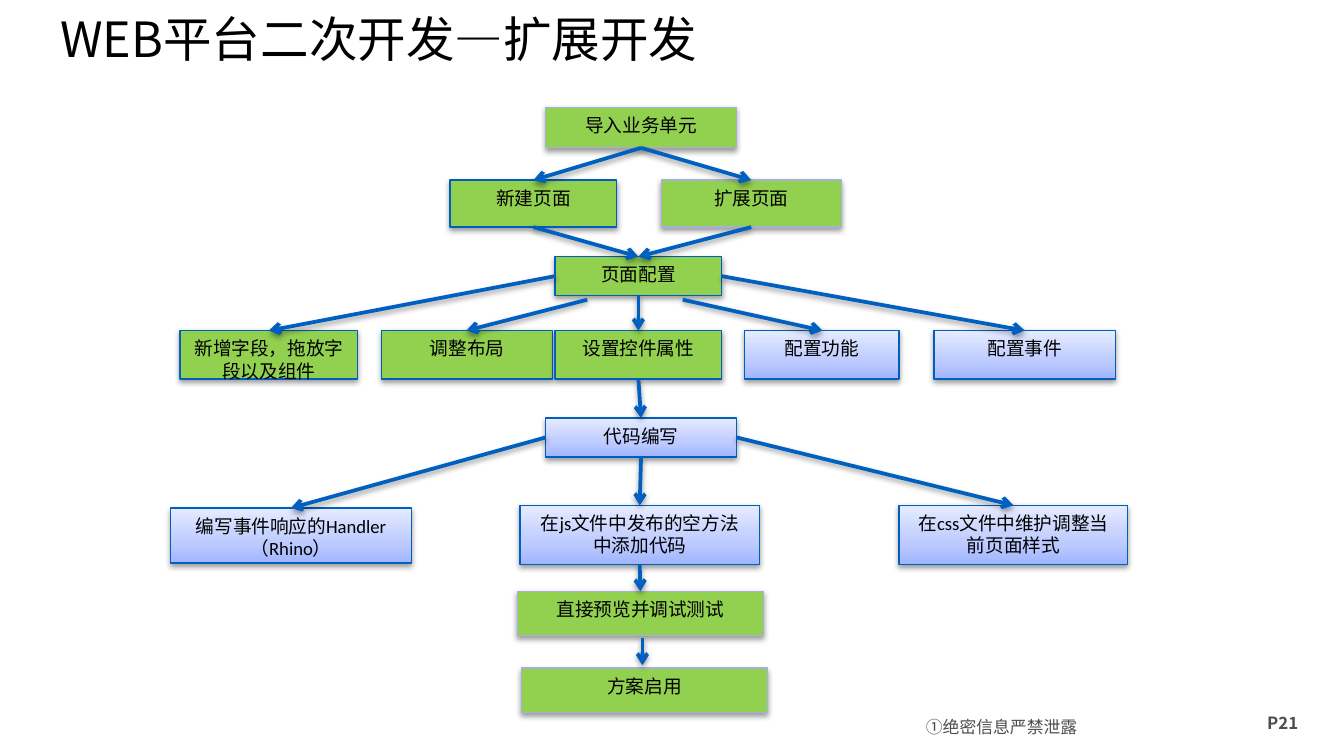
"""Build the slide showing the extension development flow of the WEB platform."""
from copy import deepcopy
from dataclasses import dataclass

from lxml.etree import SubElement
from pptx import Presentation
from pptx.dml.color import RGBColor
from pptx.enum.shapes import MSO_CONNECTOR as Connector, MSO_SHAPE as Shape
from pptx.enum.text import MSO_ANCHOR as Anchor, PP_ALIGN as Align
from pptx.oxml.ns import qn
from pptx.util import Inches, Pt

BLACK = RGBColor(0x00, 0x00, 0x00)
GRAY = RGBColor(0x4D, 0x4D, 0x4D)
GREEN = RGBColor(0x92, 0xD0, 0x50)
PALE_EDGE = RGBColor(0xA5, 0xB1, 0xD8)
BLUE_EDGE = RGBColor(0x00, 0x5E, 0xBC)
ARROW_BLUE = RGBColor(0x00, 0x60, 0xC0)
BLUE_STOPS = (
    (0, RGBColor(0xA0, 0xB5, 0xFF)),
    (0.35, RGBColor(0xBC, 0xCA, 0xFF)),
    (1, RGBColor(0xE5, 0xEB, 0xFF)),
)
CJK_FONT = "Noto Sans CJK SC"
TOP, LEFT, BOTTOM, RIGHT = range(4)


@dataclass
class Step:
    text: str
    left: float
    top: float
    width: float
    height: float
    green: bool = True
    edge: RGBColor = BLUE_EDGE
    font: str = "Calibri"


@dataclass
class Link:
    source: str
    target: str
    side: int = BOTTOM


@dataclass
class Caption:
    text: str
    left: float
    top: float
    width: float
    height: float
    size: float
    color: RGBColor
    margins: tuple[float, float] = (0.1, 0.05)
    bold: bool = False
    anchor: Anchor = Anchor.TOP
    align: Align = Align.LEFT
    spacing: float | None = None


ROW_PAGE = (1.34, 0.35)
ROW_CONFIG = (2.46, 0.36)
ROW_CODE = (3.76, 0.44)
STEPS = {
    "import": Step("导入业务单元", 4.06, 0.8, 1.42, 0.3, edge=PALE_EDGE, font="Arial"),
    "new": Step("新建页面", 3.35, ROW_PAGE[0], 1.24, ROW_PAGE[1]),
    "extend": Step("扩展页面", 4.92, ROW_PAGE[0], 1.34, ROW_PAGE[1], edge=PALE_EDGE),
    "config": Step("页面配置", 4.13, 1.91, 1.24, 0.29),
    "fields": Step("新增字段，拖放字段以及组件", 1.34, ROW_CONFIG[0], 1.32, ROW_CONFIG[1]),
    "layout": Step("调整布局", 2.84, ROW_CONFIG[0], 1.27, ROW_CONFIG[1]),
    "controls": Step("设置控件属性", 4.13, ROW_CONFIG[0], 1.24, ROW_CONFIG[1]),
    "functions": Step("配置功能", 5.54, ROW_CONFIG[0], 1.15, ROW_CONFIG[1], green=False),
    "events": Step("配置事件", 6.95, ROW_CONFIG[0], 1.35, ROW_CONFIG[1], green=False),
    "code": Step("代码编写", 4.06, 3.11, 1.42, 0.29, green=False),
    "handler": Step("编写事件响应的Handler\n（Rhino）", 1.27, 3.78, 1.79, 0.41, green=False),
    "js": Step("在js文件中发布的空方法中添加代码", 3.87, ROW_CODE[0], 1.78, ROW_CODE[1], green=False),
    "css": Step("在css文件中维护调整当前页面样式", 6.69, ROW_CODE[0], 1.7, ROW_CODE[1], green=False),
    "preview": Step("直接预览并调试测试", 3.85, 4.4, 1.83, 0.33, edge=PALE_EDGE),
    "enable": Step("方案启用", 3.88, 4.97, 1.83, 0.33, edge=PALE_EDGE),
}
LINKS = (
    Link("import", "new"),
    Link("import", "extend"),
    Link("new", "config"),
    Link("extend", "config"),
    Link("config", "fields", LEFT),
    Link("config", "controls"),
    Link("config", "events", RIGHT),
    Link("controls", "code"),
    Link("code", "handler", LEFT),
    Link("code", "js"),
    Link("code", "css", RIGHT),
    Link("js", "preview"),
)
FREE_ARROWS = (
    (4.37, 2.23, 3.47, 2.46),
    (5.08, 2.23, 6.12, 2.46),
    (4.78, 4.75, 4.78, 4.95),
)
CAPTIONS = (
    Caption("WEB平台二次开发—扩展开发", 0.35, 0, 7.77, 0.57, 26, BLACK, anchor=Anchor.MIDDLE),
    Caption("①绝密信息严禁泄露", 6.81, 5.28, 1.77, 0.27, 9, GRAY, margins=(0.08, 0.01),
            align=Align.JUSTIFY, spacing=14),
    Caption("P21", 9.33, 5.25, 0.56, 0.25, 9, GRAY, bold=True),
)


def format_text(frame, font: str, size: float, color: RGBColor, align: Align, bold: bool = False) -> None:
    for paragraph in frame.paragraphs:
        paragraph.alignment = align
        for run in paragraph.runs:
            run.font.name = font
            run.font.size = Pt(size)
            run.font.bold = bold
            run.font.color.rgb = color
            SubElement(run.font._element, qn("a:ea"), typeface=CJK_FONT)


def add_shadow(properties) -> None:
    effects = properties.find(qn("a:effectLst"))
    if effects is None:
        effects = SubElement(properties, qn("a:effectLst"))
    shadow = SubElement(effects, qn("a:outerShdw"), blurRad=str(Pt(3.1)), dist=str(Pt(1.6)),
                        dir="5400000", rotWithShape="0")
    tint = SubElement(shadow, qn("a:srgbClr"), val=str(BLACK))
    SubElement(tint, qn("a:alpha"), val="38000")


def fill_blue(box) -> None:
    box.fill.gradient()
    box.fill.gradient_angle = 90
    stop_list = box._element.spPr.find(".//" + qn("a:gsLst"))
    stop_list.append(deepcopy(stop_list[1]))
    for stop, (position, color) in zip(box.fill.gradient_stops, BLUE_STOPS):
        stop.position = position
        stop.color.rgb = color


def add_step(slide, step: Step):
    box = slide.shapes.add_shape(
        Shape.RECTANGLE, Inches(step.left), Inches(step.top), Inches(step.width), Inches(step.height))
    if step.green:
        box.fill.solid()
        box.fill.fore_color.rgb = GREEN
    else:
        fill_blue(box)
    box.line.color.rgb = step.edge
    box.line.width = Pt(0.75)
    box.shadow.inherit = False
    add_shadow(box._element.spPr)
    frame = box.text_frame
    frame.text = step.text
    frame.word_wrap = True
    frame.vertical_anchor = Anchor.TOP
    format_text(frame, step.font, 10, BLACK, Align.CENTER)
    return box


def add_arrow(slide, x1: float, y1: float, x2: float, y2: float):
    arrow = slide.shapes.add_connector(
        Connector.STRAIGHT, Inches(x1), Inches(y1), Inches(x2), Inches(y2))
    arrow.line.color.rgb = ARROW_BLUE
    arrow.line.width = Pt(2)
    SubElement(arrow.line._get_or_add_ln(), qn("a:tailEnd"), type="arrow")
    add_shadow(arrow._element.spPr)
    return arrow


def add_caption(slide, caption: Caption) -> None:
    box = slide.shapes.add_textbox(
        Inches(caption.left), Inches(caption.top), Inches(caption.width), Inches(caption.height))
    frame = box.text_frame
    frame.text = caption.text
    frame.word_wrap = True
    frame.vertical_anchor = caption.anchor
    frame.margin_left = frame.margin_right = Inches(caption.margins[0])
    frame.margin_top = frame.margin_bottom = Inches(caption.margins[1])
    if caption.spacing:
        frame.paragraphs[0].line_spacing = Pt(caption.spacing)
    format_text(frame, CJK_FONT, caption.size, caption.color, caption.align, caption.bold)


def main() -> None:
    deck = Presentation()
    deck.slide_width, deck.slide_height = Inches(10), Inches(10 * 9 / 16)
    slide = deck.slides.add_slide(deck.slide_layouts[6])
    for caption in CAPTIONS:
        add_caption(slide, caption)
    boxes = {key: add_step(slide, step) for key, step in STEPS.items()}
    for link in LINKS:
        arrow = add_arrow(slide, 0, 0, 0, 0)
        arrow.begin_connect(boxes[link.source], link.side)
        arrow.end_connect(boxes[link.target], TOP)
    for ends in FREE_ARROWS:
        add_arrow(slide, *ends)
    deck.save("out.pptx")


if __name__ == "__main__":
    main()
